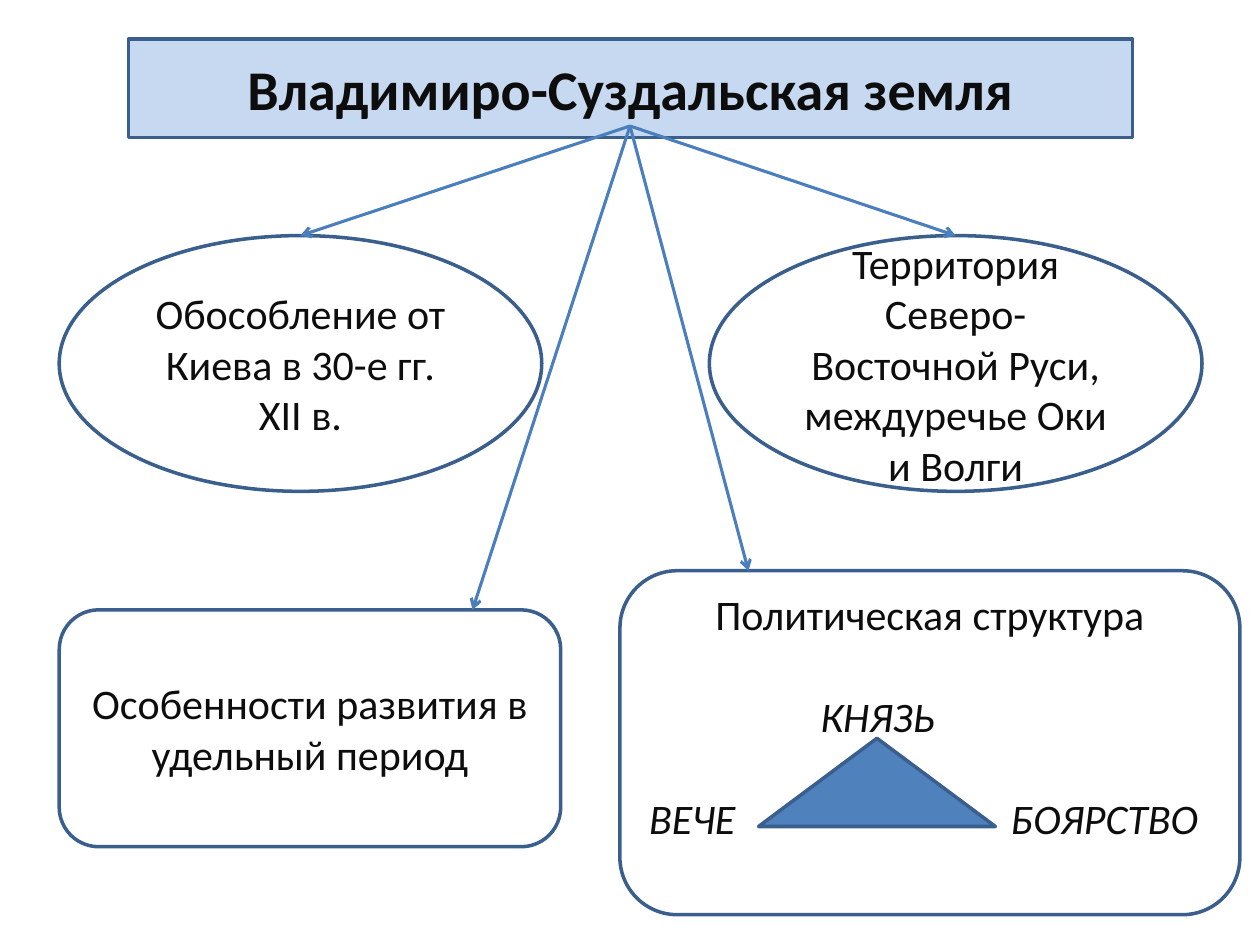
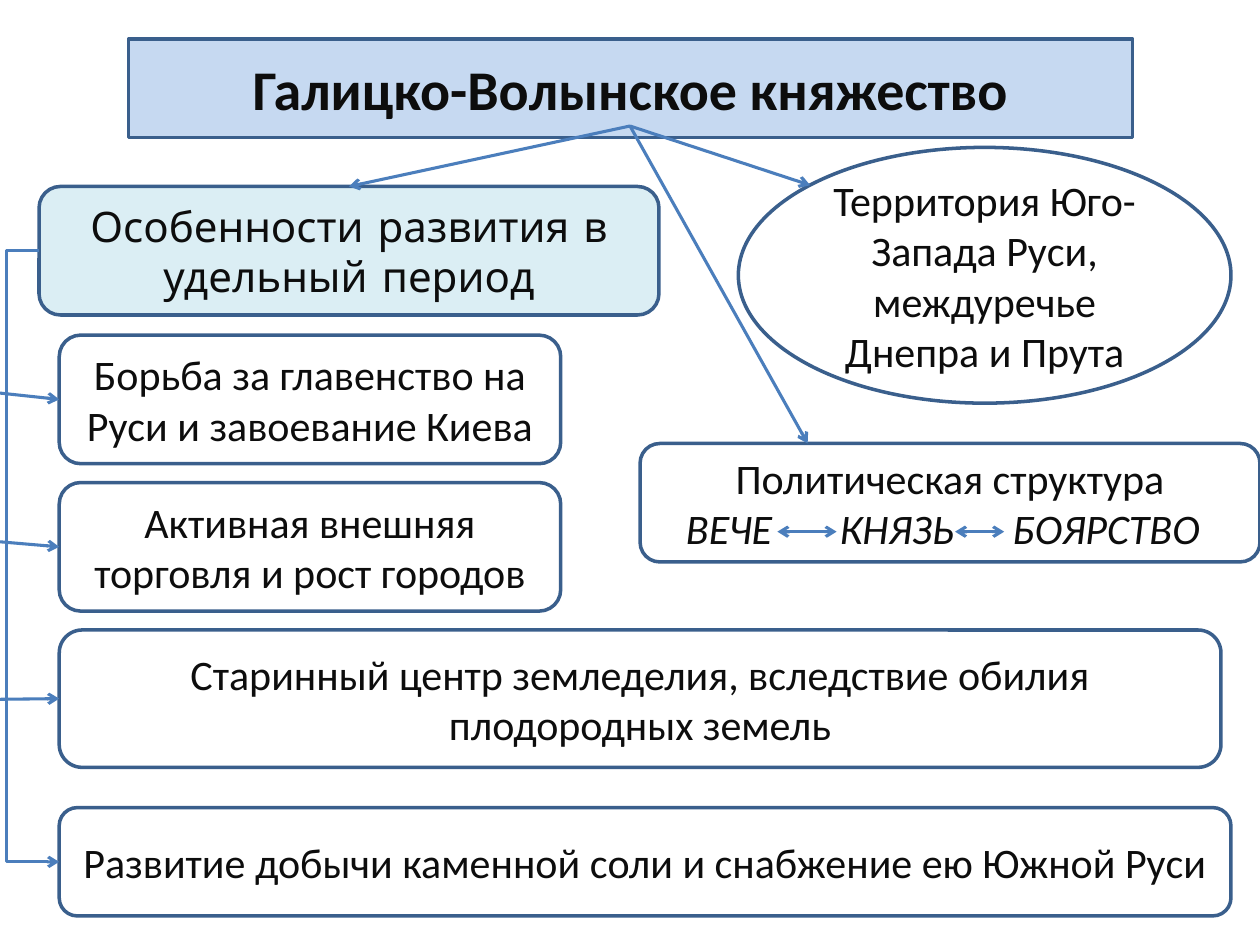
import pptx
import pptx.util
import pptx.dml.color
import pptx.enum.shapes
import pptx.enum.text
import pptx.oxml
import pptx.oxml.ns
import lxml.etree

Inches, Pt = pptx.util.Inches, pptx.util.Pt
MSO_SHAPE = pptx.enum.shapes.MSO_SHAPE
MSO_CONNECTOR = pptx.enum.shapes.MSO_CONNECTOR
PP_ALIGN = pptx.enum.text.PP_ALIGN
MSO_ANCHOR = pptx.enum.text.MSO_ANCHOR
qn = pptx.oxml.ns.qn

COLORS = {"banner": "C6D9F1", "white": "FFFFFF", "tint": "DBEEF4", "accent": "4F81BD",
          "border": "3A5F8C", "arrow": "4B7EBC", "text": "0D0D0D"}
FONT = "Calibri"
BANNER = (1.02, 0.31, 7.97, 0.78)
HUB = (5, 1)  # arrows fan out from the lower edge of the banner
TOP, LEFT = 0, 1
OVAL, ROUND = MSO_SHAPE.OVAL, MSO_SHAPE.ROUNDED_RECTANGLE

# Boxes: name, shape, (left, top, width, height), text, extra style.
# "powers" rows are tabbed lines under the text: (words, tab stops).
# Arrows: start, end, where an end is a point or (box name, side).
SLIDES = [
    {
        "title": "Владимиро-Суздальская земля",
        "boxes": [
            ("separation", OVAL, (0.47, 1.87, 3.83, 2.03),
             "Обособление от Киева в 30-е гг. XII в.", {}),
            ("territory", OVAL, (5.63, 1.87, 3.91, 2.03),
             "Территория Северо-Восточной Руси, междуречье Оки и Волги", {}),
            ("features", ROUND, (0.47, 4.84, 3.98, 1.88),
             "Особенности развития в удельный период", {}),
            ("politics", ROUND, (4.92, 4.53, 4.92, 2.73), "Политическая структура",
             {"powers": [("\tКНЯЗЬ", [1.36]), ("ВЕЧЕ\tБОЯРСТВО", [2.87])],
              "gap": 29.3, "top_inset": 0.01}),
            ("triangle", MSO_SHAPE.ISOSCELES_TRIANGLE, (6.02, 5.86, 1.88, 0.7), "",
             {"fill": "accent"}),
        ],
        "arrows": [
            (HUB, ("separation", TOP)),
            (HUB, ("territory", TOP)),
            (HUB, (3.75, 4.84)),
            (HUB, (5.94, 4.53)),
        ],
    },
    {
        "title": "Галицко-Волынское княжество",
        "boxes": [
            ("territory", OVAL, (5.86, 1.17, 3.91, 2.03),
             "Территория Юго- Запада Руси, междуречье Днепра и Прута", {}),
            ("politics", ROUND, (5.08, 3.52, 4.92, 0.94), "Политическая структура",
             {"powers": [("\tВЕЧЕ\tКНЯЗЬ\tБОЯРСТВО", [0.22, 1.44, 2.81])]}),
            ("features", ROUND, (0.31, 1.48, 4.92, 1.02),
             "Особенности развития в удельный период",
             {"fill": "tint", "font": "Comic Neue"}),
            ("farming", ROUND, (0.47, 5, 9.22, 1.09),
             "Старинный центр земледелия, вследствие обилия плодородных земель", {}),
            ("salt", ROUND, (0.47, 6.41, 9.3, 0.86),
             "Развитие добычи каменной соли и снабжение ею Южной Руси", {}),
            ("trade", ROUND, (0.47, 3.83, 3.98, 1.02),
             "Активная внешняя торговля и рост городов", {}),
            ("struggle", ROUND, (0.47, 2.66, 3.98, 1.02),
             "Борьба за главенство на Руси и завоевание Киева", {}),
        ],
        "arrows": [
            ((0, 3.12), ("struggle", LEFT)),
            ((0, 4.3), ("trade", LEFT)),
            ((0, 5.55), ("farming", LEFT)),
            (HUB, ("features", TOP)),
            (HUB, (6.43, 1.47)),
            (HUB, (6.41, 3.52)),
        ],
        "double_arrows": [((6.17, 4.22), (6.64, 4.22)), ((7.58, 4.22), (7.97, 4.22))],
        "elbow": (("features", LEFT), ("salt", LEFT), 0.05),
    },
]


def rgb(name):
    return pptx.dml.color.RGBColor.from_string(COLORS[name])


def paint(sp, fill):
    sp.fill.solid()
    sp.fill.fore_color.rgb = rgb(fill)
    sp.line.color.rgb = rgb("border")
    sp.line.width = Pt(2)
    sp.shadow.inherit = False


def add_run(p, text, size=24, font=FONT, bold=False, italic=False):
    r = p.add_run()
    r.text = text
    r.font.size, r.font.name = Pt(size), font
    r.font.bold, r.font.italic = bold, italic
    r.font.color.rgb = rgb("text")


def add_tabs(p, stops):
    tabs = lxml.etree.SubElement(p._p.get_or_add_pPr(), qn("a:tabLst"))
    for stop in stops:
        lxml.etree.SubElement(tabs, qn("a:tab"), pos=str(Inches(stop)), algn="l")


def add_banner(s, text):
    """Turn the title placeholder into the scroll banner."""
    sp = s.shapes.title
    sp.left, sp.top, sp.width, sp.height = map(Inches, BANNER)
    geom = lxml.etree.SubElement(sp._element.spPr, qn("a:prstGeom"), prst="horizontalScroll")
    lxml.etree.SubElement(geom, qn("a:avLst"))
    paint(sp, "banner")
    tf = sp.text_frame
    tf.auto_size = pptx.enum.text.MSO_AUTO_SIZE.NONE
    tf.vertical_anchor = MSO_ANCHOR.MIDDLE
    p = tf.paragraphs[0]
    p.alignment = PP_ALIGN.CENTER
    add_run(p, text, 32, bold=True)


def add_box(s, shape, at, text, style):
    sp = s.shapes.add_shape(shape, *map(Inches, at))
    paint(sp, style.get("fill", "white"))
    if not text:
        return sp
    tf = sp.text_frame
    tf.word_wrap = True
    tf.vertical_anchor = MSO_ANCHOR.MIDDLE
    if "top_inset" in style:
        tf.vertical_anchor = MSO_ANCHOR.TOP
        tf.margin_top = Inches(style["top_inset"])
    p = tf.paragraphs[0]
    p.alignment = PP_ALIGN.CENTER
    add_run(p, text, font=style.get("font", FONT))
    for words, stops in style.get("powers", []):
        p = tf.add_paragraph()
        p.alignment = PP_ALIGN.LEFT
        add_tabs(p, stops)
        p.space_before = Pt(style.get("gap", 0))
        add_run(p, words, italic=True)
    return sp


def add_arrow(s, boxes, start, end, kind=MSO_CONNECTOR.STRAIGHT, heads=("tailEnd",)):
    points = [(0, 0) if pt[0] in boxes else pt for pt in (start, end)]
    c = s.shapes.add_connector(kind, *(Inches(v) for pt in points for v in pt))
    for pt, connect in ((start, c.begin_connect), (end, c.end_connect)):
        if pt[0] in boxes:
            connect(boxes[pt[0]], pt[1])
    c.line.color.rgb = rgb("arrow")
    c.line.width = Pt(1.75)
    for head in heads:
        lxml.etree.SubElement(c.line._get_or_add_ln(), qn("a:" + head), type="arrow")
    lxml.etree.SubElement(c._element.spPr, qn("a:effectLst"))
    return c


def add_elbow(s, boxes, start, end, bend_x):
    """Draw a bent arrow whose vertical part stands at bend_x."""
    c = add_arrow(s, boxes, start, end, MSO_CONNECTOR.ELBOW)
    bend = round((Inches(bend_x) - c.begin_x) / (c.end_x - c.begin_x) * 100000)
    geom = c._element.spPr.find(qn("a:prstGeom"))
    guides = geom.find(qn("a:avLst"))
    if guides is None:
        guides = lxml.etree.SubElement(geom, qn("a:avLst"))
    lxml.etree.SubElement(guides, qn("a:gd"), name="adj1", fmla=f"val {bend}")


def main():
    prs = pptx.Presentation()
    prs.slide_width, prs.slide_height = Inches(10), Inches(7.5)
    title_only = prs.slide_layouts[5]
    for content in SLIDES:
        s = prs.slides.add_slide(title_only)
        add_banner(s, content["title"])
        boxes = {name: add_box(s, *box) for name, *box in content["boxes"]}
        for start, end in content["arrows"]:
            add_arrow(s, boxes, start, end)
        for start, end in content.get("double_arrows", []):
            add_arrow(s, boxes, start, end, heads=("headEnd", "tailEnd"))
        if "elbow" in content:
            add_elbow(s, boxes, *content["elbow"])
    prs.save("out.pptx")


if __name__ == "__main__":
    main()
